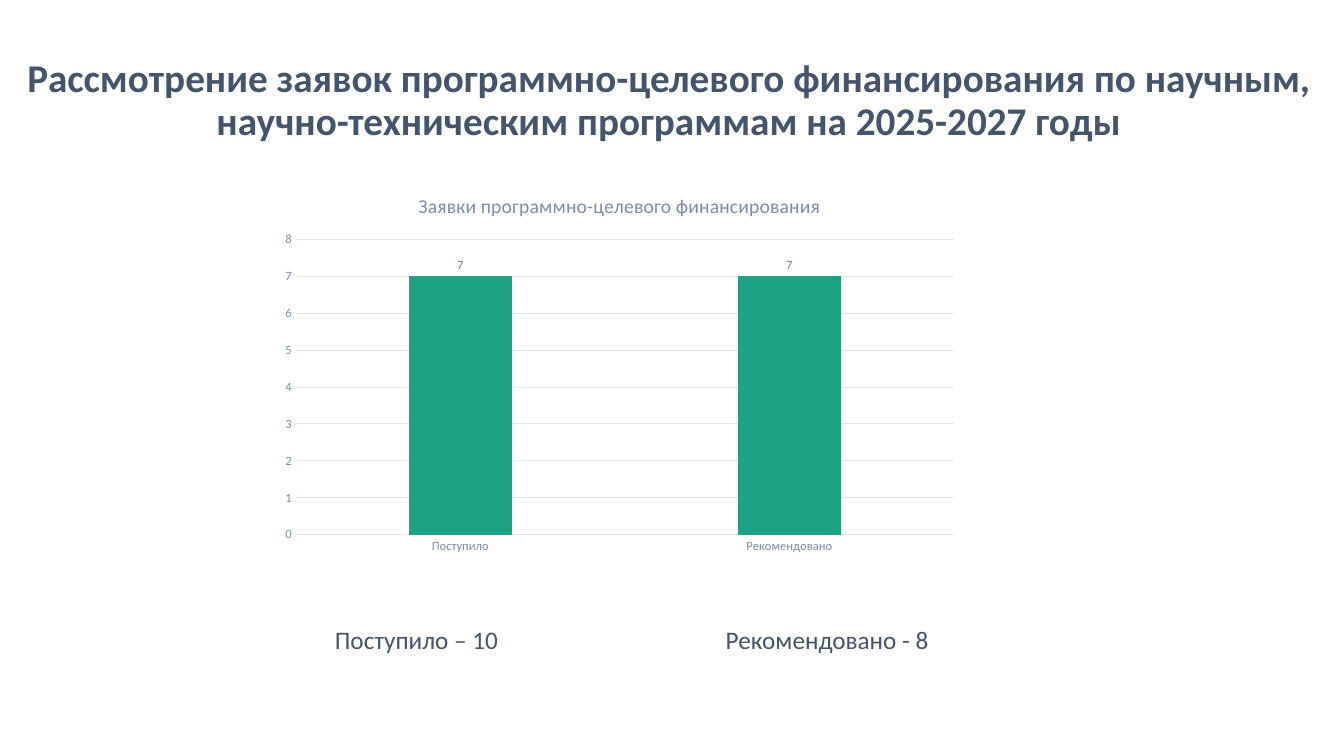
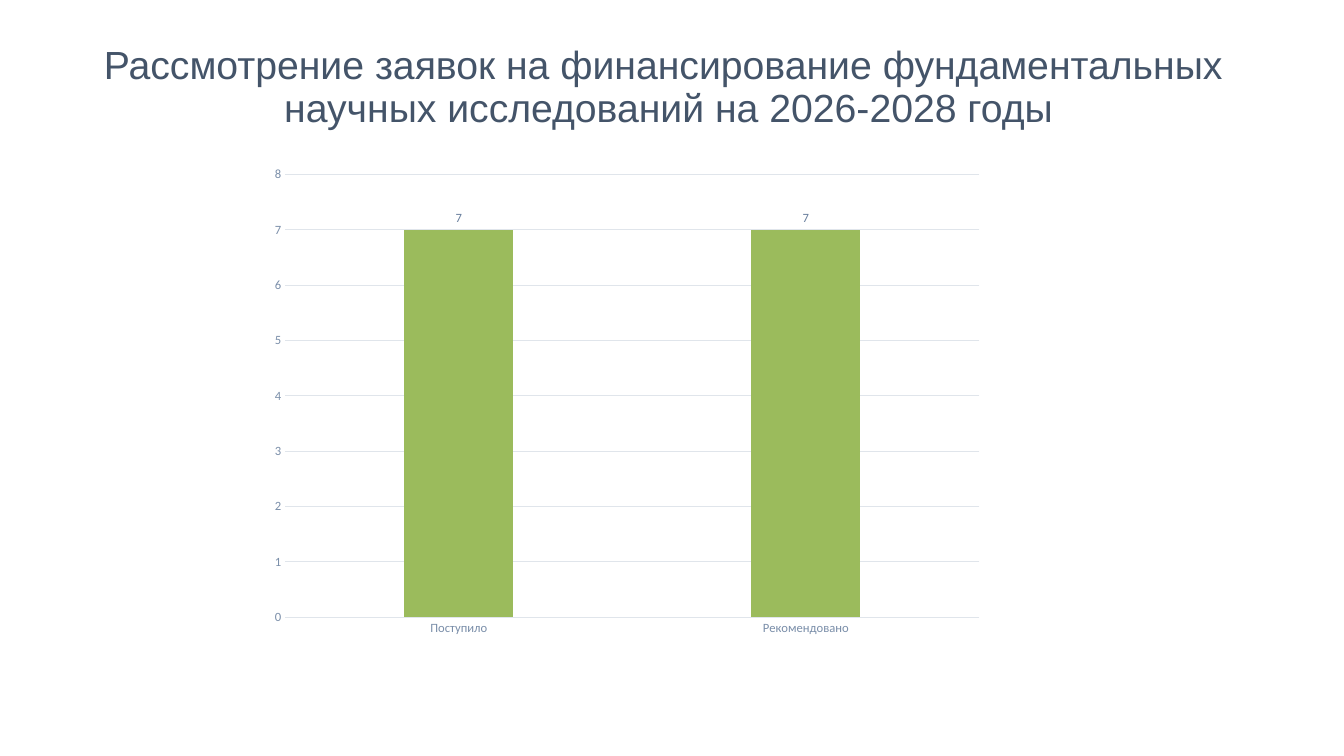
from lxml.etree import SubElement
from pptx import Presentation
from pptx.chart.data import CategoryChartData
from pptx.dml.color import RGBColor
from pptx.enum.chart import XL_CHART_TYPE, XL_LABEL_POSITION, XL_TICK_MARK
from pptx.enum.shapes import MSO_SHAPE
from pptx.enum.text import MSO_ANCHOR, PP_ALIGN
from pptx.oxml.ns import qn
from pptx.util import Cm, Pt

SLIDE_WIDTH, SLIDE_HEIGHT = 33.87, 19.05
DARK = "445469"
WHITE = "FFFFFF"
AXIS_TEXT = "7A8EA9"
LABEL_TEXT = "667D9C"
GRID = "E0E5EB"
GREEN = "1EA185"
OLIVE = "9BBB5C"
BODY_FONT = "Calibri"
CATEGORIES = ["Поступило", "Рекомендовано"]


def color(value):
    return RGBColor.from_string(value)


def format_font(font, size, fill, name=BODY_FONT, bold=False):
    font.name = name
    font.size = Pt(size)
    font.bold = bold
    font.color.rgb = color(fill)


def write_text(paragraph, text, size=18, name=BODY_FONT, bold=False,
               align=PP_ALIGN.CENTER, line_spacing=1.0):
    paragraph.alignment = align
    paragraph.line_spacing = line_spacing
    run = paragraph.add_run()
    run.text = text
    format_font(run.font, size, DARK, name, bold)


def add_title(slide, top, lines, **text_format):
    box = (0.28, top, SLIDE_WIDTH - 0.74, 1.9)
    frame = slide.shapes.add_textbox(*map(Cm, box)).text_frame
    frame.word_wrap = True
    for index, line in enumerate(lines):
        paragraph = frame.add_paragraph() if index else frame.paragraphs[0]
        write_text(paragraph, line, size=28, line_spacing=0.9, **text_format)


def format_line(line, value, width):
    line.color.rgb = color(value)
    line.width = Pt(width)


def format_axis(axis):
    axis.major_tick_mark = XL_TICK_MARK.NONE
    axis.minor_tick_mark = XL_TICK_MARK.NONE
    format_font(axis.tick_labels.font, 9, AXIS_TEXT)


def add_column_chart(slide, box, values, fill, title=None):
    data = CategoryChartData()
    data.categories = CATEGORIES
    data.add_series("Series 1", values)
    chart = slide.shapes.add_chart(
        XL_CHART_TYPE.COLUMN_CLUSTERED, *map(Cm, box), data).chart
    format_font(chart.font, 10, DARK)
    chart.has_legend = False
    chart.has_title = title is not None
    if title:
        frame = chart.chart_title.text_frame
        frame.text = title
        format_font(frame.paragraphs[0].runs[0].font, 14, AXIS_TEXT)

    format_axis(chart.category_axis)
    format_line(chart.category_axis.format.line, GRID, 0.75)
    value_axis = chart.value_axis
    format_axis(value_axis)
    value_axis.format.line.fill.background()
    value_axis.minimum_scale, value_axis.maximum_scale = 0, 8
    value_axis.major_unit = 1
    value_axis.has_major_gridlines = True
    format_line(value_axis.major_gridlines.format.line, GRID, 0.75)

    plot = chart.plots[0]
    plot.gap_width = 219
    plot.overlap = -27
    plot.vary_by_categories = False
    series_fill = plot.series[0].format.fill
    series_fill.solid()
    series_fill.fore_color.rgb = color(fill)
    plot.has_data_labels = True
    labels = plot.data_labels
    labels.show_value = True
    labels.position = XL_LABEL_POSITION.OUTSIDE_END
    format_font(labels.font, 9, LABEL_TEXT)


def add_totals(slide, box, totals, stops):
    shape = slide.shapes.add_shape(MSO_SHAPE.RECTANGLE, *map(Cm, box))
    shape.shadow.inherit = False
    shape.fill.background()
    format_line(shape.line, WHITE, 1)
    frame = shape.text_frame
    frame.word_wrap = True
    frame.vertical_anchor = MSO_ANCHOR.MIDDLE
    paragraph = frame.paragraphs[0]
    write_text(paragraph, "".join("\t" + total for total in totals),
               align=PP_ALIGN.LEFT)
    tab_list = SubElement(paragraph._p.get_or_add_pPr(), qn("a:tabLst"))
    for stop in stops:
        SubElement(tab_list, qn("a:tab"), pos=str(Cm(stop)), algn="l")


def build_program_slide(slide):
    add_title(slide, 1.36, [
        "Рассмотрение заявок программно-целевого финансирования по научным, "
        "научно-техническим программам на 2025-2027 годы"], bold=True)
    add_totals(slide, (4.19, 15.59, 23.52, 1.04),
               ["Поступило – 10", "Рекомендовано - 8"], (4, 13.85))
    add_column_chart(slide, (6.84, 4.42, 17.55, 9.72), (7, 7), GREEN,
                     title="Заявки программно-целевого финансирования")


def build_research_slide(slide):
    add_title(slide, 1.03, [
        "Рассмотрение заявок на финансирование фундаментальных ",
        "научных исследований на 2026-2028 годы"], name="Arial")
    add_column_chart(slide, (6.56, 3.97, 18.49, 12.3), (7, 7), OLIVE)


def main():
    presentation = Presentation()
    presentation.slide_width = Cm(SLIDE_WIDTH)
    presentation.slide_height = Cm(SLIDE_HEIGHT)
    for build in (build_program_slide, build_research_slide):
        build(presentation.slides.add_slide(presentation.slide_layouts[6]))
    presentation.save("out.pptx")


if __name__ == "__main__":
    main()
